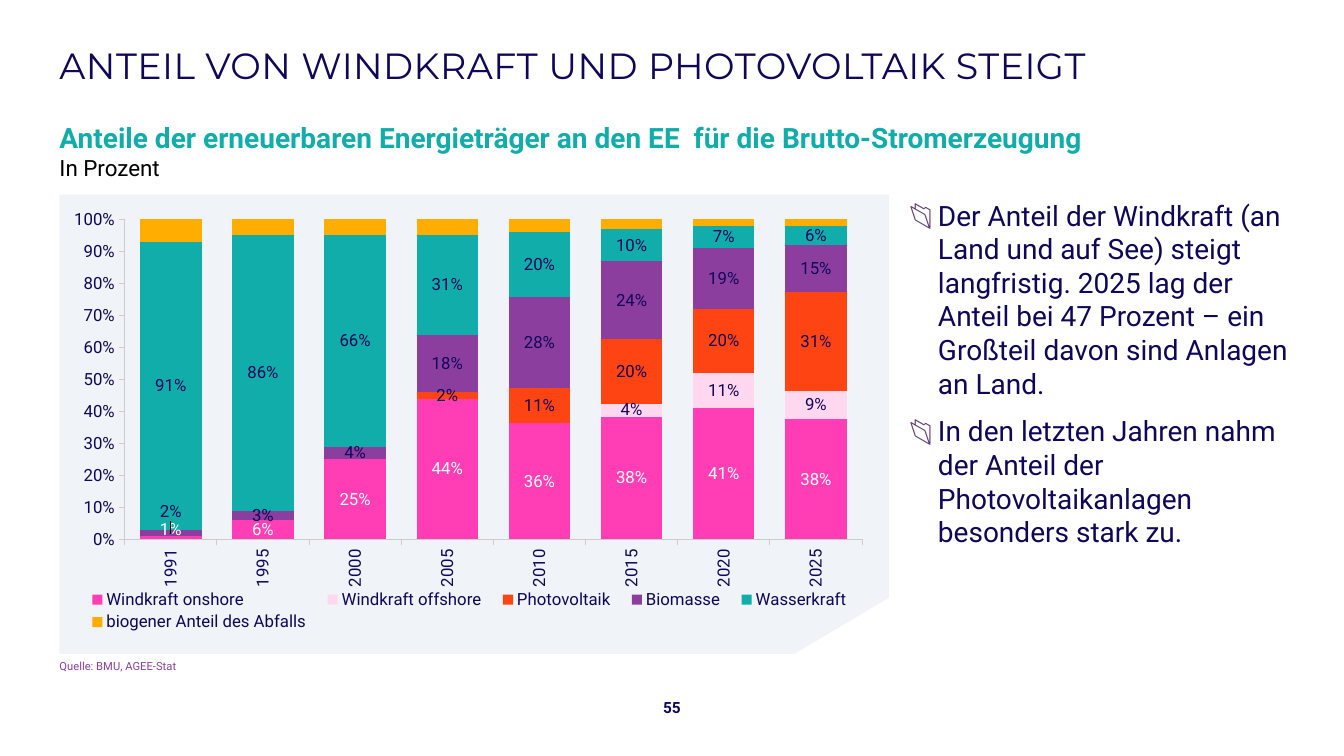
"""Build the slide on the growing share of wind power and photovoltaics."""
from dataclasses import dataclass
from typing import Any

from lxml import etree
from pptx import Presentation
from pptx.chart.data import CategoryChartData
from pptx.dml.color import RGBColor
from pptx.enum.chart import XL_CHART_TYPE, XL_LABEL_POSITION, XL_LEGEND_POSITION, XL_TICK_MARK
from pptx.enum.text import MSO_ANCHOR, MSO_AUTO_SIZE, PP_ALIGN
from pptx.oxml.ns import qn
from pptx.slide import Slide
from pptx.text.text import Font
from pptx.util import Pt

STACKED, BOTTOM = XL_CHART_TYPE.COLUMN_STACKED_100, XL_LEGEND_POSITION.BOTTOM
INNER, OUTSIDE, NO_TICK = XL_LABEL_POSITION.CENTER, XL_TICK_MARK.OUTSIDE, XL_TICK_MARK.NONE
TOP, MIDDLE, NO_FIT = MSO_ANCHOR.TOP, MSO_ANCHOR.MIDDLE, MSO_AUTO_SIZE.NONE
LEFT, CENTER = PP_ALIGN.LEFT, PP_ALIGN.CENTER

COLORS = {"navy": "10065A", "teal": "10ADAA", "purple": "8C3E9F", "plum": "623C72",
          "pink": "FF3EB5", "rose": "FFD8F0", "orange": "FF4414", "amber": "FFAD00",
          "panel": "F0F3F7", "grey": "CCCCCC", "white": "FFFFFF", "black": "000000"}
YEARS = ["1991", "1995", "2000", "2005", "2010", "2015", "2020", "2025"]
PANEL = [(42.5, 139), (635, 139), (635, 427), (567.5, 467), (42.5, 467)]
EDGE = {"xMode": "edge", "yMode": "edge"}
PLOT = {"layoutTarget": "inner", **EDGE, "x": 0.07, "y": 0.03, "w": 0.92, "h": 0.74}
LEGEND = {**EDGE, "x": 0.01, "y": 0.88, "w": 0.98, "h": 0.11}


@dataclass
class Block:
    """Place and look of one text."""
    lines: list[str]
    box: tuple[float, float, float, float]
    size: float
    color: str = "navy"
    bold: bool = False
    face: str = "Roboto"
    anchor: Any = TOP
    align: Any = LEFT
    inset: float = 0
    bullet: bool = False
    track: int = 0


@dataclass
class Source:
    """One energy source, its shares by year and the lift of its first label."""
    name: str
    color: str
    shares: list[float]
    label: str = "navy"
    lift: float = 0


TITLE = Block(["ANTEIL VON WINDKRAFT UND PHOTOVOLTAIK STEIGT"], (42.5, 11, 878, 70.5), 26,
              face="Montserrat", anchor=MIDDLE, inset=3, track=30)
HEADING = Block(["Anteile der erneuerbaren Energieträger an den EE  für die Brutto-Stromerzeugung"],
                (42.5, 85.75, 878, 22), 20, "teal", True)
POINTS = Block([
    "Der Anteil der Windkraft (an Land und auf See) steigt langfristig. 2025 lag der "
    "Anteil bei 47 Prozent – ein Großteil davon sind Anlagen an Land.",
    "In den letzten Jahren nahm der Anteil der Photovoltaikanlagen besonders stark zu.",
], (649.5, 138.5, 272, 317.5), 20, inset=3, bullet=True)
UNIT = Block(["In Prozent"], (42.5, 110.25, 878, 20), 16, "black")
CREDIT = Block(["Quelle: BMU, AGEE-Stat"], (42.5, 471, 793.5, 9.5), 8, "purple")
NUMBER = Block(["55"], (458.75, 495.5, 42.5, 20), 11, bold=True, anchor=MIDDLE, align=CENTER)
SOURCES = [
    Source("Windkraft onshore", "pink",
           [0.01, 0.06, 0.25, 0.44, 0.36, 0.38, 0.41, 0.38], "white", -0.02),
    Source("Windkraft offshore", "rose", [0, 0, 0, 0, 0, 0.04, 0.11, 0.09]),
    Source("Photovoltaik", "orange", [0, 0, 0, 0.02, 0.11, 0.2, 0.2, 0.31]),
    Source("Biomasse", "purple", [0.02, 0.03, 0.04, 0.18, 0.28, 0.24, 0.19, 0.15], lift=-0.05),
    Source("Wasserkraft", "teal", [0.91, 0.86, 0.66, 0.31, 0.2, 0.1, 0.07, 0.06]),
    Source("biogener Anteil des Abfalls", "amber",
           [0.07, 0.05, 0.05, 0.05, 0.04, 0.03, 0.02, 0.02], ""),
]


def assign(target: Any, values: dict[str, Any]) -> None:
    """Set each named value on the target."""
    for name, value in values.items():
        setattr(target, name, value)


def tint(name: str) -> RGBColor:
    """Look up a colour by name."""
    return RGBColor.from_string(COLORS[name])


def style(font: Font, size: float, color: str, bold: bool = False, face: str = "Roboto") -> None:
    """Set the look of a font."""
    assign(font, {"size": Pt(size), "bold": bold, "name": face})
    font.color.rgb = tint(color)


def mark(props: Any, bullet: bool) -> None:
    """Give a paragraph its hanging bullet, or none."""
    hang = Pt(20.5) if bullet else 0
    props.set("marL", str(hang))
    props.set("indent", str(-hang))
    if bullet:
        shade = etree.SubElement(props, qn("a:buClr"))
        etree.SubElement(shade, qn("a:srgbClr"), val=COLORS["plum"])
        etree.SubElement(props, qn("a:buChar"), char="📂")
    else:
        etree.SubElement(props, qn("a:buNone"))


def write(shape: Any, block: Block) -> None:
    """Place a text shape and fill it."""
    assign(shape, dict(zip(("left", "top", "width", "height"), map(Pt, block.box))))
    frame = shape.text_frame
    assign(frame, {"word_wrap": True, "auto_size": NO_FIT, "vertical_anchor": block.anchor,
                   "margin_left": 0, "margin_right": 0,
                   "margin_top": Pt(block.inset), "margin_bottom": Pt(block.inset)})
    for index, line in enumerate(block.lines):
        para = frame.add_paragraph() if index else frame.paragraphs[0]
        mark(para._p.get_or_add_pPr(), block.bullet)
        assign(para, {"alignment": block.align, "space_before": Pt(10 if index else 0)})
        run = para.add_run()
        run.text = line
        style(run.font, block.size, block.color, block.bold, block.face)
        if block.track:
            run._r.get_or_add_rPr().set("spc", str(block.track))


def draw_panel(slide: Slide) -> None:
    """Draw the pale panel with its cut corner."""
    points = [(Pt(x), Pt(y)) for x, y in PANEL]
    form = slide.shapes.build_freeform(*points[0])
    form.add_line_segments(points[1:], close=True)
    panel = form.convert_to_shape()
    panel.shadow.inherit = False
    panel.fill.solid()
    panel.fill.fore_color.rgb = tint("panel")
    panel.line.fill.background()


def arrange(part: Any, spot: int, values: dict[str, Any]) -> None:
    """Give a chart part its manual layout."""
    for old in part.findall(qn("c:layout")):
        part.remove(old)
    layout = etree.Element(qn("c:layout"))
    manual = etree.SubElement(layout, qn("c:manualLayout"))
    for name, value in values.items():
        etree.SubElement(manual, qn(f"c:{name}"), val=str(value))
    part.insert(spot, layout)


def draw_chart(slide: Slide) -> None:
    """Draw the stacked shares by year."""
    data = CategoryChartData(number_format="0%")
    data.categories = YEARS
    for source in SOURCES:
        data.add_series(source.name, source.shares)
    chart = slide.shapes.add_chart(STACKED, Pt(49), Pt(147.5), Pt(572.5), Pt(309), data).chart
    assign(chart, {"has_title": False, "has_legend": True})
    assign(chart.legend, {"position": BOTTOM, "include_in_layout": False})
    for axis in (chart.category_axis, chart.value_axis):
        assign(axis, {"major_tick_mark": OUTSIDE, "minor_tick_mark": NO_TICK,
                      "has_major_gridlines": False})
        axis.format.line.width = Pt(0.75)
        axis.format.line.color.rgb = tint("grey")
    for item in (chart, chart.legend, chart.category_axis.tick_labels, chart.value_axis.tick_labels):
        style(item.font, 12, "navy")
    assign(chart.value_axis, {"minimum_scale": 0, "maximum_scale": 1, "major_unit": 0.1})
    assign(chart.value_axis.tick_labels, {"number_format": "0%", "number_format_is_linked": False})
    assign(chart.plots[0], {"gap_width": 50, "overlap": 100, "vary_by_categories": False})
    for series, source in zip(chart.plots[0].series, SOURCES):
        series.format.fill.solid()
        series.format.fill.fore_color.rgb = tint(source.color)
        if source.label:
            assign(series.data_labels, {"show_value": True, "position": INNER,
                                        "number_format": "0%;;", "number_format_is_linked": False})
            style(series.data_labels.font, 12, source.label)
        if source.lift:
            first = series.points[0].data_label
            style(first.font, 12, source.label)
            first.position = INNER
            arrange(chart.element.xpath(".//c:dLbl")[-1], 1, {"x": 0, "y": source.lift})
    arrange(chart.element.xpath(".//c:plotArea")[0], 0, PLOT)
    arrange(chart.element.xpath(".//c:legend")[0], 1, LEGEND)
    body = chart.element.xpath(".//c:catAx/c:txPr/a:bodyPr")[0]
    body.set("rot", "-5400000")
    body.set("vert", "horz")


def main() -> None:
    """Build and save the slide."""
    deck = Presentation()
    assign(deck, {"slide_width": Pt(960), "slide_height": Pt(540)})
    slide = deck.slides.add_slide(deck.slide_layouts[4])
    draw_panel(slide)
    for holder, block in zip(slide.placeholders, (TITLE, HEADING, POINTS, UNIT, CREDIT)):
        write(holder, block)
    write(slide.shapes.add_textbox(0, 0, 0, 0), NUMBER)
    draw_chart(slide)
    deck.save("out.pptx")


if __name__ == "__main__":
    main()
